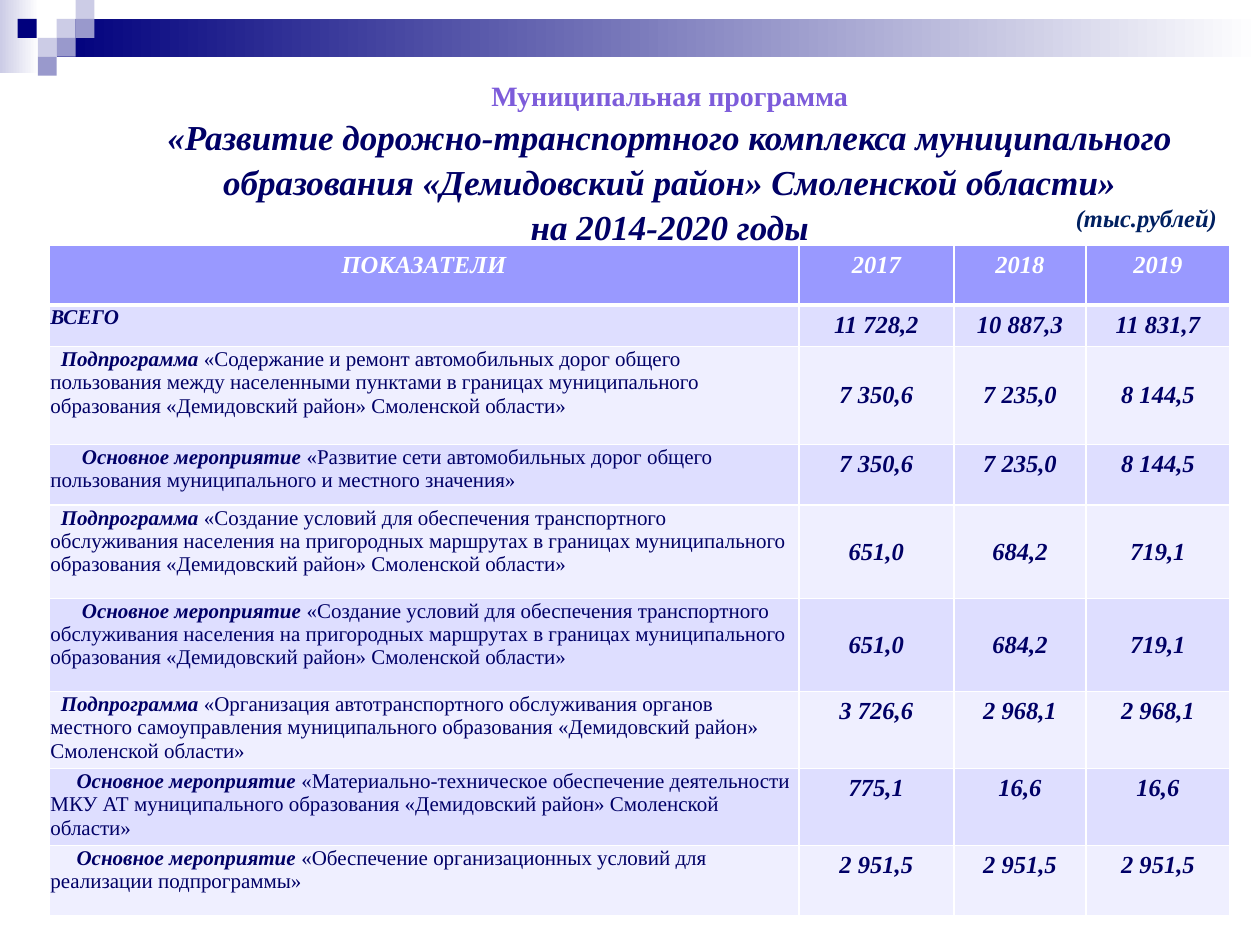
from dataclasses import dataclass

from lxml import etree
from pptx import Presentation, util as u
from pptx.dml.color import RGBColor
from pptx.enum import shapes, text
from pptx.oxml.ns import qn


@dataclass(frozen=True)
class Theme:
    font: str = "Times New Roman"
    navy: str = "00007D"
    lilac: str = "CCCCE6"
    violet: str = "9999CC"
    white: str = "FFFFFF"
    ink: str = "000066"
    kicker: str = "7D5CDA"
    unit: str = "002060"
    header: str = "9999FF"
    bands: tuple = ("DEDEFF", "EFEFFF")
    kicker_size: int = 16
    title_size: int = 20
    figure_size: int = 14
    label_size: int = 12


class SlideBuilder:
    """Places elements on a grid of 100 columns by 75 rows."""

    def __init__(self, deck, theme):
        self.theme = theme
        self.column = deck.slide_width / 100
        self.row = deck.slide_height / 75
        self.page = deck.slides.add_slide(deck.slide_layouts[5])

    def frame(self, left, top, width, height):
        return (round(left * self.column), round(top * self.row),
                round(width * self.column), round(height * self.row))

    def style(self, font, size, color, bold=True, italic=True):
        font.name, font.size = self.theme.font, u.Pt(size)
        font.bold, font.italic = bold, italic
        font.color.rgb = RGBColor.from_string(color)

    def block(self, place, color, fade_to=None):
        box = self.page.shapes.add_shape(shapes.MSO_SHAPE.RECTANGLE, *self.frame(*place))
        box.shadow.inherit = False
        box.line.fill.background()
        if fade_to:
            box.fill.gradient()
            box.fill.gradient_angle = 0
            for stop, shade in zip(box.fill.gradient_stops, (color, fade_to)):
                stop.color.rgb = RGBColor.from_string(shade)
        else:
            box.fill.solid()
            box.fill.fore_color.rgb = RGBColor.from_string(color)

    def title(self, place, lines):
        box = self.page.shapes.title
        box.left, box.top, box.width, box.height = self.frame(*place)
        frame = box.text_frame
        frame.word_wrap = True
        frame.auto_size = text.MSO_AUTO_SIZE.NONE
        frame.vertical_anchor = text.MSO_ANCHOR.TOP
        frame.text = "\n".join(line for line, *_ in lines)
        for para, (_, size, color, italic) in zip(frame.paragraphs, lines):
            para.alignment = text.PP_ALIGN.CENTER
            para.line_spacing = 1.08
            para.space_before = u.Pt(0)
            self.style(para.font, size, color, italic=italic)

    def note(self, place, words, color):
        box = self.page.shapes.add_textbox(*self.frame(*place))
        box.text_frame.word_wrap = False
        para = box.text_frame.paragraphs[0]
        para.text = words
        self.style(para.font, self.theme.figure_size, color)

    def border(self, cell, bottom):
        properties = cell._tc.get_or_add_tcPr()
        sides = (("a:lnL", 1), ("a:lnR", 1), ("a:lnT", 1), ("a:lnB", bottom))
        for index, (side, width) in enumerate(sides):
            line = etree.Element(qn(side), w=str(u.Pt(width)))
            fill = etree.SubElement(line, qn("a:solidFill"))
            etree.SubElement(fill, qn("a:srgbClr"), val=self.theme.white)
            properties.insert(index, line)

    def figure(self, cell, words, color, middle=False):
        para = cell.text_frame.paragraphs[0]
        para.text = words
        para.alignment = text.PP_ALIGN.CENTER
        cell.vertical_anchor = text.MSO_ANCHOR.MIDDLE if middle else text.MSO_ANCHOR.TOP
        self.style(para.font, self.theme.figure_size, color)

    def label(self, cell, lead, name, indent):
        cell.margin_left = cell.margin_right = cell.margin_top = u.Inches(0.01)
        cell.margin_bottom = 0
        para = cell.text_frame.paragraphs[0]
        para._p.get_or_add_pPr().set("indent", str(u.Pt(indent)))
        for words, strong in ((lead, True), (name, False)):
            if words:
                span = para.add_run()
                span.text = words
                self.style(span.font, self.theme.label_size, self.theme.ink, strong, strong)

    def table(self, place, widths, heights, header, records):
        theme = self.theme
        grid = self.page.shapes.add_table(
            len(heights), len(widths), *self.frame(*place)).table
        for column, width in zip(grid.columns, widths):
            column.width = round(width * self.column)
        for row, height in zip(grid.rows, heights):
            row.height = round(height * self.row)
        for index, row in enumerate(grid.rows):
            color = theme.bands[(index - 1) % 2] if index else theme.header
            for cell in row.cells:
                cell.fill.solid()
                cell.fill.fore_color.rgb = RGBColor.from_string(color)
                self.border(cell, bottom=1 if index else 3)
        for cell, words in zip(grid.rows[0].cells, header):
            self.figure(cell, words, theme.white)
        for row, (lead, name, indent, middle, figures) in zip(list(grid.rows)[1:], records):
            first, *others = row.cells
            self.label(first, lead, name, indent)
            for cell, words in zip(others, figures):
                self.figure(cell, words, theme.ink, middle)


SUBPROGRAM = "Подпрограмма "
ACTIVITY = "Основное мероприятие "
TRANSIT = ("«Создание условий для обеспечения транспортного обслуживания населения на "
           "пригородных маршрутах в границах муниципального образования "
           "«Демидовский район» Смоленской области»")

# Lead, name, first-line indent in points, figures centred vertically, figures
RECORDS = [
    ("ВСЕГО", "", 0, False, ("11 728,2", "10 887,3", "11 831,7")),
    (SUBPROGRAM, "«Содержание и ремонт автомобильных дорог общего пользования между "
     "населенными пунктами в границах муниципального образования "
     "«Демидовский район» Смоленской области»",
     6, True, ("7 350,6", "7 235,0", "8 144,5")),
    (ACTIVITY, "«Развитие сети автомобильных дорог общего пользования "
     "муниципального и местного значения»",
     18, False, ("7 350,6", "7 235,0", "8 144,5")),
    (SUBPROGRAM, TRANSIT, 6, True, ("651,0", "684,2", "719,1")),
    (ACTIVITY, TRANSIT, 18, True, ("651,0", "684,2", "719,1")),
    (SUBPROGRAM, "«Организация автотранспортного обслуживания органов местного "
     "самоуправления муниципального образования «Демидовский район» Смоленской области»",
     6, False, ("3 726,6", "2 968,1", "2 968,1")),
    (ACTIVITY, "«Материально-техническое обеспечение деятельности МКУ АТ "
     "муниципального образования «Демидовский район» Смоленской области»",
     15, False, ("775,1", "16,6", "16,6")),
    (ACTIVITY, "«Обеспечение организационных условий для реализации подпрограммы»",
     15, False, ("2 951,5", "2 951,5", "2 951,5")),
]


def main():
    theme = Theme()
    deck = Presentation()
    deck.slide_width, deck.slide_height = u.Inches(10), u.Inches(7.5)
    slide = SlideBuilder(deck, theme)

    # Banner with its mosaic of squares
    slide.block((0, 0, 3.1, 5.8), theme.lilac, theme.white)
    slide.block((4.5, 1.5, 95.5, 3), theme.navy, theme.white)
    for left, top, color in (
            (4.5, 1.5, theme.lilac), (6, 0, theme.lilac), (6, 1.5, theme.violet),
            (3, 3, theme.lilac), (1.4, 1.5, theme.navy), (4.5, 3, theme.violet),
            (3, 4.5, theme.violet)):
        slide.block((left, top, 1.5, 1.5), color)

    # Title
    slide.title((10.2, 5.5, 85.9, 13.8), [
        ("Муниципальная программа", theme.kicker_size, theme.kicker, False),
        ("«Развитие дорожно-транспортного комплекса муниципального образования "
         "«Демидовский район» Смоленской области»", theme.title_size, theme.ink, True),
        ("на 2014-2020 годы", theme.title_size, theme.ink, True),
    ])

    # Indicators by year
    slide.table((3.9, 19.5, 93.7, 53.2), (59.5, 12.3, 10.5, 11.4),
                (4.7, 3.3, 7.8, 4.8, 7.4, 7.4, 6.1, 6.1, 5.6),
                ("ПОКАЗАТЕЛИ", "2017", "2018", "2019"), RECORDS)

    # Unit of measure
    slide.note((84.4, 15.6, 13.3, 3.4), "(тыс.рублей)", theme.unit)

    deck.save("out.pptx")


if __name__ == "__main__":
    main()
